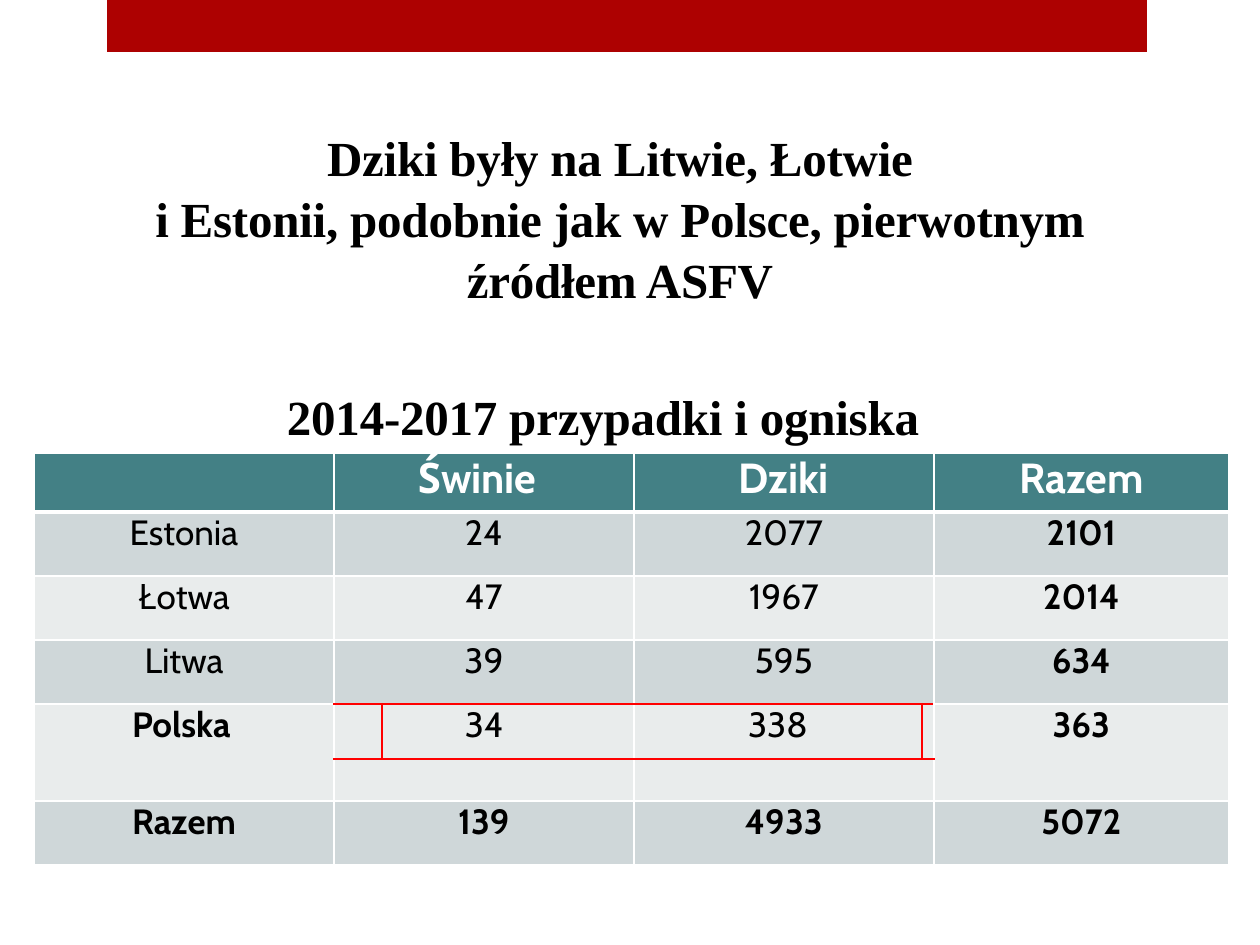
import pptx
import pptx.dml.color
import pptx.enum.shapes
import pptx.enum.text
import pptx.oxml
import pptx.oxml.ns
import pptx.util

RGB = pptx.dml.color.RGBColor
ALIGN = pptx.enum.text.PP_ALIGN
RED_BAR = RGB(0xAD, 0x01, 0x01)
RED = RGB(0xFF, 0x00, 0x00)
WHITE = RGB(0xFF, 0xFF, 0xFF)
BLACK = RGB(0x00, 0x00, 0x00)
TEAL = RGB(0x43, 0x80, 0x85)
DARK_BAND = RGB(0xCF, 0xD7, 0xD9)
LIGHT_BAND = RGB(0xE9, 0xEC, 0xEC)

EMU_PER_PX = 914400 / 126
WIDTH, HEIGHT = 1260, 945

TITLE_LINES = [
    "Dziki były na Litwie, Łotwie",
    "i Estonii, podobnie jak w Polsce, pierwotnym",
    "źródłem ASFV",
    "2014-2017 przypadki i ogniska",
]
COLUMNS = [300, 48, 252, 288, 12, 295]
ROWS = [59, 64, 64, 64, 55, 42, 64]
BANDS = [TEAL, DARK_BAND, LIGHT_BAND, DARK_BAND, LIGHT_BAND, LIGHT_BAND, DARK_BAND]
CASES = [
    ["", "Świnie", "", "Dziki", "", "Razem"],
    ["Estonia", "24", "", "2077", "", "2101"],
    ["Łotwa", "47", "", "1967", "", "2014"],
    ["Litwa", "39", "", "595", "", "634"],
    ["Polska", "", "34", "338", "", "363"],
    [""] * 6,
    ["Razem", "139", "", "4933", "", "5072"],
]
POLAND, TOTAL_ROW, TOTAL_COLUMN = 4, 6, 5
# Left indents in px; a cell listed here starts at its indent, the others are centred.
INDENTS = {(0, 1): 84, (POLAND, 0): 98, (POLAND, 2): 83}


def px(n):
    return pptx.util.Emu(round(n * EMU_PER_PX))


def indent(p, left):
    p.alignment = ALIGN.LEFT
    p._p.get_or_add_pPr().set("marL", str(px(left)))


def edges(row, column):
    """Colour and width in points of each side of a cell, red around the Polish counts."""
    sides = {side: (WHITE, 1) for side in "LRTB"}
    if row < 2:
        sides["B" if row == 0 else "T"] = (WHITE, 3)
    red = (RED, 1.56)
    if 1 <= column <= 4:
        if row in (POLAND - 1, POLAND):
            sides["B"] = red
        if row in (POLAND, POLAND + 1):
            sides["T"] = red
    if row == POLAND:
        if column in (1, 3):
            sides["R"] = red
        if column in (2, 4):
            sides["L"] = red
    return sides


class Deck:
    title_font, table_font = "Times New Roman", "Cabin"

    def __init__(self):
        self.prs = pptx.Presentation()
        self.prs.slide_width, self.prs.slide_height = px(WIDTH), px(HEIGHT)
        self.s = self.prs.slides.add_slide(self.prs.slide_layouts[5])

    def style(self, r, font, size, color, bold):
        r.font.name, r.font.size, r.font.bold = font, pptx.util.Pt(size), bold
        r.font.color.rgb = color

    def bar(self, x, y, w, h, color):
        sp = self.s.shapes.add_shape(
            pptx.enum.shapes.MSO_SHAPE.RECTANGLE, px(x), px(y), px(w), px(h))
        sp.shadow.inherit = False
        sp.fill.solid()
        sp.fill.fore_color.rgb = color
        sp.line.fill.background()

    def title(self, x, y, w, h, lines):
        sp = self.s.shapes.title
        sp.left, sp.top, sp.width, sp.height = px(x), px(y), px(w), px(h)
        tf = sp.text_frame
        tf.word_wrap = True
        tf.auto_size = pptx.enum.text.MSO_AUTO_SIZE.NONE
        tf.vertical_anchor = pptx.enum.text.MSO_ANCHOR.TOP
        tf.margin_left = tf.margin_right = tf.margin_top = tf.margin_bottom = 0
        tf.text = "\n".join(lines)
        for p in tf.paragraphs:
            p.alignment = ALIGN.CENTER
            p.line_spacing = 1.04
            p.space_before = pptx.util.Pt(0)
            for r in p.runs:
                self.style(r, self.title_font, 28, BLACK, True)
                r._r.get_or_add_rPr().set("spc", "-10")
        p = tf.paragraphs[-1]
        p.space_before = pptx.util.Pt(43)
        indent(p, 185)

    def borders(self, cell, sides):
        tcPr = cell._tc.get_or_add_tcPr()
        for side, (color, width) in sides.items():
            tcPr.append(pptx.oxml.parse_xml(
                f'<a:ln{side} {pptx.oxml.ns.nsdecls("a")} w="{pptx.util.Pt(width)}">'
                f'<a:solidFill><a:srgbClr val="{color}"/></a:solidFill></a:ln{side}>'))

    def cell(self, cell, row, column, text):
        cell.margin_left = cell.margin_right = cell.margin_top = cell.margin_bottom = 0
        self.borders(cell, edges(row, column))
        cell.fill.solid()
        cell.fill.fore_color.rgb = BANDS[row]
        if not text:
            return
        cell.text = text
        p = cell.text_frame.paragraphs[0]
        p.alignment = ALIGN.CENTER
        if (row, column) in INDENTS:
            indent(p, INDENTS[row, column])
        bold = (row in (0, TOTAL_ROW) or column == TOTAL_COLUMN
                or (row, column) == (POLAND, 0))
        size, color = (24, WHITE) if row == 0 else (20, BLACK)
        self.style(p.runs[0], self.table_font, size, color, bold)

    def table(self, x, y):
        table = self.s.shapes.add_table(
            len(ROWS), len(COLUMNS), px(x), px(y), px(sum(COLUMNS)), px(sum(ROWS))).table
        table.horz_banding = False
        for column, w in zip(table.columns, COLUMNS):
            column.width = px(w)
        for row, h in zip(table.rows, ROWS):
            row.height = px(h)
        for i, texts in enumerate(CASES):
            for j, text in enumerate(texts):
                self.cell(table.cell(i, j), i, j, text)
            if i != POLAND:
                for j in (1, 3):
                    table.cell(i, j).merge(table.cell(i, j + 1))
        for j in (0, TOTAL_COLUMN):
            table.cell(POLAND, j).merge(table.cell(POLAND + 1, j))


def main():
    deck = Deck()
    deck.bar(107, 0, 1040, 52, RED_BAR)
    deck.title(102, 125, 1036, 312, TITLE_LINES)
    deck.table(34, 453)
    deck.prs.save("out.pptx")


if __name__ == "__main__":
    main()
